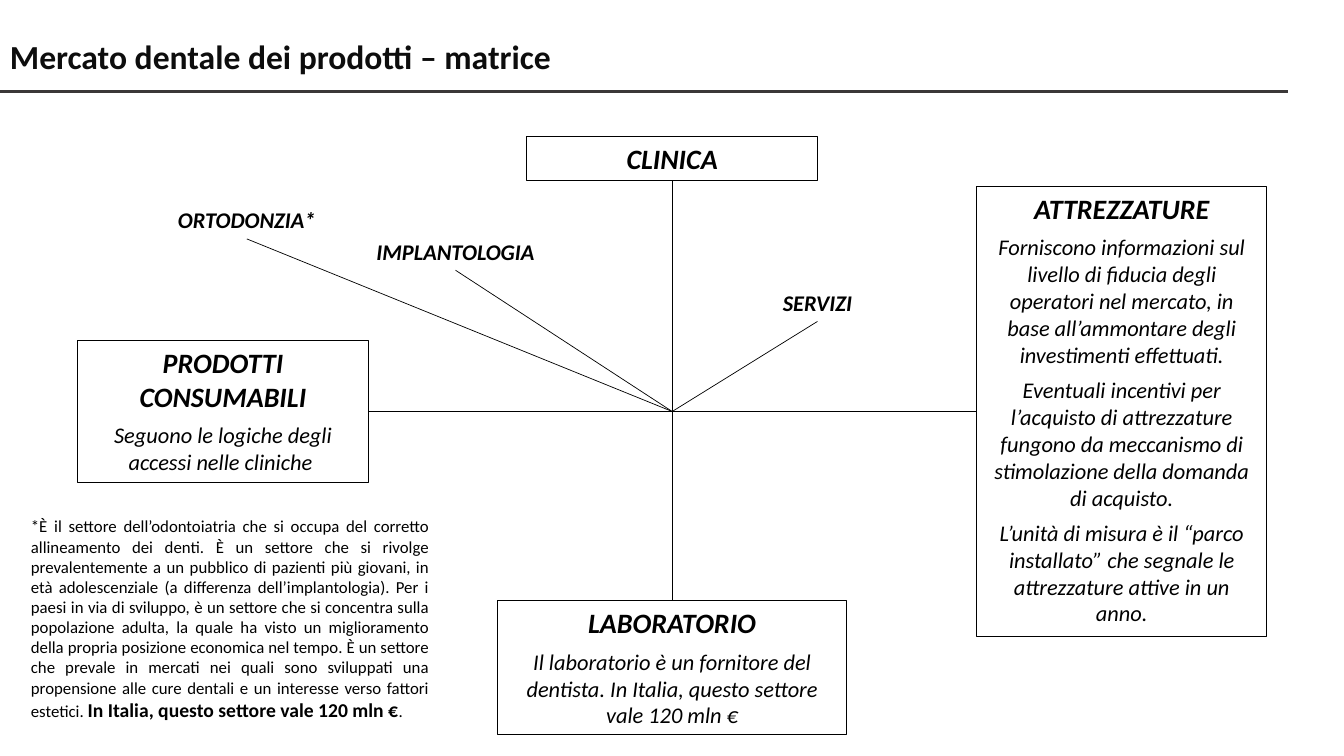
from lxml import etree
from pptx import Presentation
from pptx import util as u
from pptx.dml.color import RGBColor
from pptx.enum import shapes, text
from pptx.oxml import ns

BLACK = RGBColor(0x00, 0x00, 0x00)
TITLE_INK = RGBColor(0x0D, 0x0D, 0x0D)
RULE_GREY = RGBColor(0x3B, 0x38, 0x38)
CENTER = text.PP_ALIGN.CENTER
TOP, LEFT, BOTTOM, RIGHT = range(4)
HUB = (16.94, 10.37)
BOX_WIDTH = 7.32


class MatrixSlide:
    """Draws the elements of the market matrix in one style."""

    font = "Calibri"

    def __init__(self, presentation):
        self.slide = presentation.slides.add_slide(presentation.slide_layouts[6])

    def set_text(self, shape, paragraphs, align, italic=False, color=BLACK, after=6):
        frame = shape.text_frame
        frame.word_wrap = True
        frame.vertical_anchor = text.MSO_ANCHOR.TOP
        frame.auto_size = text.MSO_AUTO_SIZE.SHAPE_TO_FIT_TEXT
        for index, pieces in enumerate(paragraphs):
            paragraph = frame.add_paragraph() if index else frame.paragraphs[0]
            paragraph.alignment = align
            paragraph.space_after = u.Pt(after)
            paragraph.text = pieces[0][0]
            for words, _, _ in pieces[1:]:
                paragraph.add_run().text = words
            for run, (_, size, bold) in zip(paragraph.runs, pieces):
                run.font.name = self.font
                run.font.size = u.Pt(size)
                run.font.bold = bold
                run.font.italic = italic
                run.font.color.rgb = color

    def text_box(self, place, paragraphs, align, **style):
        shape = self.slide.shapes.add_textbox(*map(u.Cm, place))
        self.set_text(shape, paragraphs, align, **style)
        return shape

    def title(self, words):
        shape = self.text_box((0, 0.58, 32.44, 1.78), [[(words, 24, True)]],
                              text.PP_ALIGN.LEFT, color=TITLE_INK, after=0)
        shape.text_frame.auto_size = text.MSO_AUTO_SIZE.NONE
        shape.text_frame.vertical_anchor = text.MSO_ANCHOR.MIDDLE
        shape.text_frame.paragraphs[0].line_spacing = 0.9

    def label(self, left, top, words):
        return self.text_box((left, top, BOX_WIDTH, 0.94), [[(words, 16, True)]],
                             CENTER, italic=True)

    def box(self, place, heading, *details):
        shape = self.slide.shapes.add_shape(shapes.MSO_SHAPE.RECTANGLE, *map(u.Cm, place))
        shape.shadow.inherit = False
        shape.fill.background()
        shape.line.color.rgb = BLACK
        shape.line.width = u.Pt(0.75)
        paragraphs = [heading] + [[(detail, 16, False)] for detail in details]
        self.set_text(shape, paragraphs, CENTER, italic=True)
        return shape

    def line(self, start, end, color=BLACK, width=0.5):
        connector = self.slide.shapes.add_connector(
            shapes.MSO_CONNECTOR.STRAIGHT, *map(u.Cm, start + end))
        connector.line.color.rgb = color
        connector.line.width = u.Pt(width)
        etree.SubElement(connector._element.spPr, ns.qn("a:effectLst"))
        return connector

    def join(self, first, first_side, second, second_side):
        connector = self.line(HUB, HUB)
        connector.begin_connect(first, first_side)
        connector.end_connect(second, second_side)

    def spoke(self, label):
        self.line(HUB, HUB).begin_connect(label, BOTTOM)


def main():
    presentation = Presentation()
    presentation.slide_width = u.Cm(33.87)
    presentation.slide_height = u.Cm(19.05)
    matrix = MatrixSlide(presentation)

    matrix.line((0, 2.31), (32.46, 2.31), RULE_GREY, 2.25)
    matrix.title("Mercato dentale dei prodotti – matrice")

    consumables = matrix.box(
        (1.96, 8.59, BOX_WIDTH, 3.56),
        [("PRODOTTI", 20, True), (" ", 16, True), ("CONSUMABILI", 20, True)],
        "Seguono le logiche degli accessi nelle cliniche ")
    equipment = matrix.box(
        (24.61, 4.7, BOX_WIDTH, 11.34),
        [("ATTREZZATURE", 20, True)],
        "Forniscono informazioni sul livello di fiducia degli operatori nel mercato, "
        "in base all’ammontare degli investimenti effettuati.",
        "Eventuali incentivi per l’acquisto di attrezzature fungono da meccanismo di "
        "stimolazione della domanda di acquisto.",
        "L’unità di misura è il “parco installato” che segnale le attrezzature attive "
        "in un anno.")
    clinic = matrix.box((13.28, 3.43, BOX_WIDTH, 1.12), [("CLINICA", 20, True)])
    laboratory = matrix.box(
        (12.54, 15.14, 8.8, 3.38),
        [("LABORATORIO", 20, True)],
        "Il laboratorio è un fornitore del dentista. In Italia, questo settore vale "
        "120 mln €")

    matrix.join(consumables, RIGHT, equipment, LEFT)
    matrix.join(clinic, BOTTOM, laboratory, TOP)
    for left, top, words in ((2.56, 5.08, "ORTODONZIA*"),
                             (7.82, 5.87, "IMPLANTOLOGIA"),
                             (16.94, 7.16, "SERVIZI")):
        matrix.spoke(matrix.label(left, top, words))

    note = ("*È il settore dell’odontoiatria che si occupa del corretto allineamento dei "
            "denti. È un settore che si rivolge prevalentemente a un pubblico di pazienti "
            "più giovani, in età adolescenziale (a differenza dell’implantologia). Per i "
            "paesi in via di sviluppo, è un settore che si concentra sulla popolazione "
            "adulta, la quale ha visto un miglioramento della propria posizione economica "
            "nel tempo. È un settore che prevale in mercati nei quali sono sviluppati una "
            "propensione alle cure dentali e un interesse verso fattori estetici. ")
    matrix.text_box(
        (0.53, 12.88, 10.54, 5.46),
        [[(note, 12, False), ("In Italia, questo settore vale 120 mln €", 14, True),
          (".", 12, False)]],
        text.PP_ALIGN.JUSTIFY)

    presentation.save("out.pptx")


if __name__ == "__main__":
    main()
